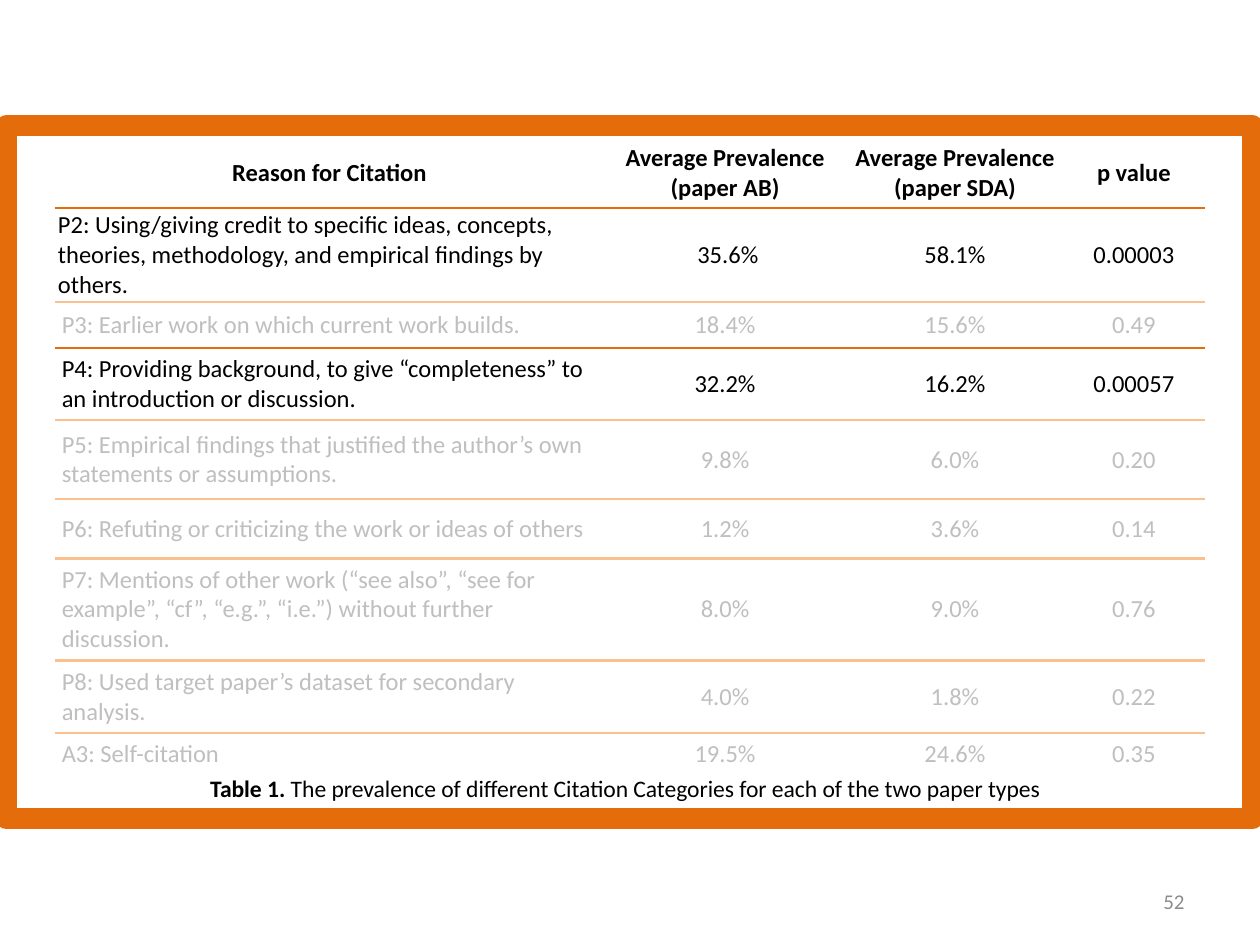
"""Builds a slide with a table of citation reasons and their prevalence."""
import lxml.etree
import pptx
import pptx.dml.color
import pptx.enum.shapes
import pptx.enum.text
import pptx.oxml
import pptx.oxml.ns
import pptx.util

Inches = pptx.util.Inches
Align = pptx.enum.text.PP_ALIGN
Anchor = pptx.enum.text.MSO_ANCHOR

FONT = "Calibri"
BLACK, GREY, WHITE = "000000", "BFBFBF", "FFFFFF"
ORANGE, PEACH = "E46C0A", "FAC090"
COLUMN_WIDTHS = [4.35, 1.93, 1.72, 1.12]
ROW_HEIGHTS = [0.55, 0.72, 0.36, 0.57, 0.63, 0.47, 0.77, 0.49, 0.33]
HIGHLIGHTED_ROWS = {0, 1, 3}
RULES = [ORANGE, PEACH, ORANGE] + [PEACH] * 5
ROWS = [
    ["Reason for Citation", "Average Prevalence\n(paper AB)",
     "Average Prevalence\n(paper SDA)", "p value"],
    ["P2: Using/giving credit to specific ideas, concepts, theories, "
     "methodology, and empirical findings by others.", " 35.6%", "58.1%", "0.00003"],
    ["P3: Earlier work on which current work builds.", "18.4%", "15.6%", "0.49"],
    ["P4: Providing background, to give “completeness” to an introduction "
     "or discussion.", "32.2%", "16.2%", "0.00057"],
    ["P5: Empirical findings that justified the author’s own statements "
     "or assumptions.", "9.8%", "6.0%", "0.20"],
    ["P6: Refuting or criticizing the work or ideas of others", "1.2%", "3.6%", "0.14"],
    ["P7: Mentions of other work (“see also”, “see for example”, “cf”, “e.g.”, "
     "“i.e.”) without further discussion.", "8.0%", "9.0%", "0.76"],
    ["P8: Used target paper’s dataset for secondary analysis.", "4.0%", "1.8%", "0.22"],
    ["A3: Self-citation", "19.5%", "24.6%", "0.35"],
]


def color(value):
    return pptx.dml.color.RGBColor.from_string(value)


def add_run(para, text, size, hex_color, bold=False):
    span = para.add_run()
    span.text = text
    span.font.name = FONT
    span.font.size = pptx.util.Pt(size)
    span.font.bold = bold
    span.font.color.rgb = color(hex_color)


def add_border(cell, side, hex_color, points):
    line = pptx.oxml.parse_xml(
        f'<a:ln{side} {pptx.oxml.ns.nsdecls("a")} w="{pptx.util.Pt(points)}">'
        f'<a:solidFill><a:srgbClr val="{hex_color}"/></a:solidFill></a:ln{side}>')
    cell._tc.get_or_add_tcPr().append(line)


def fill_cell(cell, text, row, column):
    last_column = column == len(COLUMN_WIDTHS) - 1
    inset = 0.02 if row < 2 else 0.05
    cell.margin_left = cell.margin_right = Inches(0.06 if last_column else inset)
    cell.margin_top = cell.margin_bottom = Inches(0 if last_column else inset)
    cell.vertical_anchor = Anchor.MIDDLE
    if column > 0:
        add_border(cell, "L", WHITE, 1)
    if not last_column:
        add_border(cell, "R", WHITE, 1)
    if row > 0:
        add_border(cell, "T", RULES[row - 1], 1.5)
    if row < len(RULES):
        add_border(cell, "B", RULES[row], 1.5)
    cell.fill.background()
    frame = cell.text_frame
    for index, line in enumerate(text.split("\n")):
        para = frame.add_paragraph() if index else frame.paragraphs[0]
        para.alignment = Align.LEFT if row and column == 0 else Align.CENTER
        add_run(para, line, 14, BLACK if row in HIGHLIGHTED_ROWS else GREY, row == 0)


def add_citation_table(page):
    table = page.shapes.add_table(
        len(ROWS), len(COLUMN_WIDTHS), Inches(0.44), Inches(1.1),
        Inches(sum(COLUMN_WIDTHS)), Inches(sum(ROW_HEIGHTS))).table
    table.first_row = table.horz_banding = False
    for column, width in zip(table.columns, COLUMN_WIDTHS):
        column.width = Inches(width)
    for row, height in zip(table.rows, ROW_HEIGHTS):
        row.height = Inches(height)
    for row, texts in enumerate(ROWS):
        for column, text in enumerate(texts):
            fill_cell(table.cell(row, column), text, row, column)


def add_frame(page):
    box = page.shapes.add_shape(
        pptx.enum.shapes.MSO_SHAPE.RECTANGLE,
        Inches(0.05), Inches(1), Inches(9.89), Inches(5.5))
    box.shadow.inherit = False
    box.fill.background()
    box.line.color.rgb = color(ORANGE)
    box.line.width = pptx.util.Pt(12)
    lxml.etree.SubElement(box.line._get_or_add_ln(), pptx.oxml.ns.qn("a:round"))


def add_text(page, left, top, width, height, align, anchor, runs):
    box = page.shapes.add_textbox(
        Inches(left), Inches(top), Inches(width), Inches(height))
    box.text_frame.word_wrap = True
    box.text_frame.vertical_anchor = anchor
    para = box.text_frame.paragraphs[0]
    para.alignment = align
    for run in runs:
        add_run(para, *run)


def main():
    deck = pptx.Presentation()
    deck.slide_width, deck.slide_height = Inches(10), Inches(7.5)
    page = deck.slides.add_slide(deck.slide_layouts[6])
    add_citation_table(page)
    add_frame(page)
    add_text(page, 1.57, 6.09, 6.9, 0.56, Align.LEFT, Anchor.TOP, [
        ("Table 1.", 13.5, BLACK, True),
        (" The prevalence of different Citation Categories for each of the "
         "two paper types", 13.5, BLACK)])
    add_text(page, 7.17, 6.95, 2.33, 0.4, Align.RIGHT, Anchor.MIDDLE,
             [("52", 12, "8C8C8C")])
    deck.save("out.pptx")


if __name__ == "__main__":
    main()
